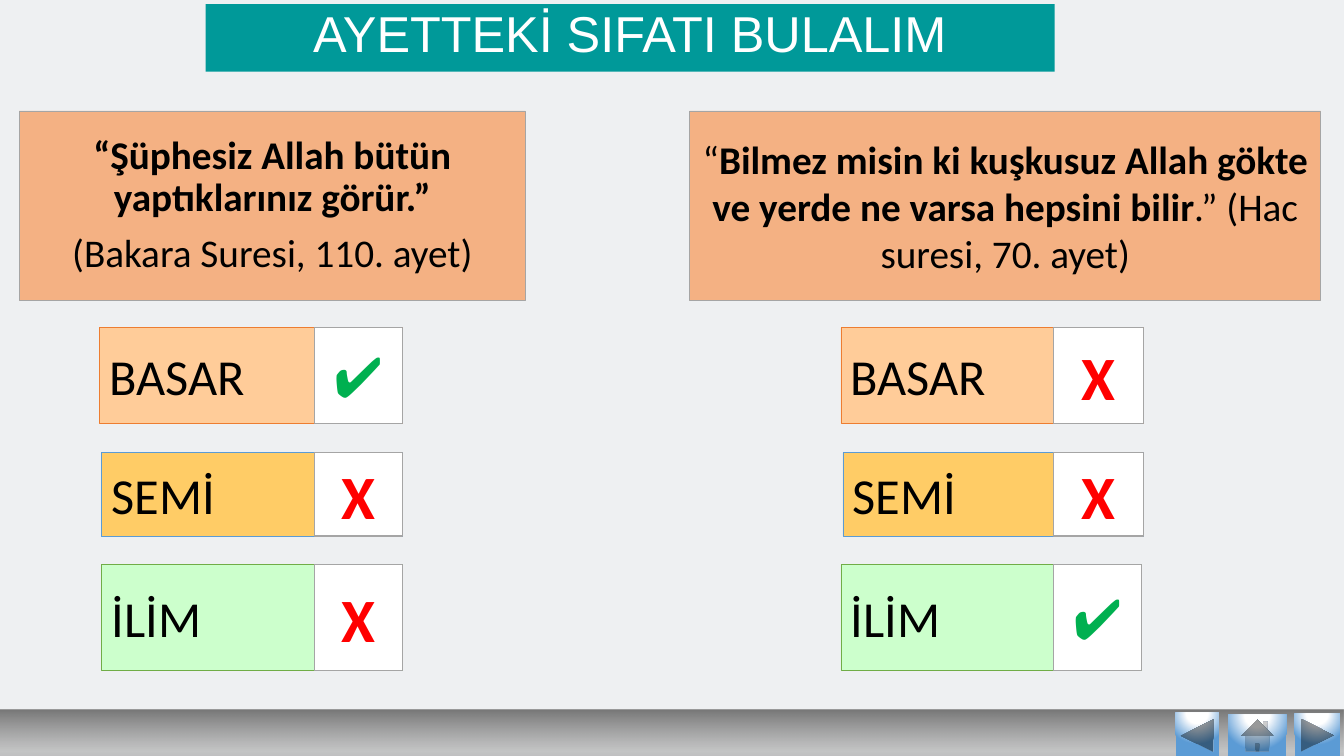
from lxml import etree
from pptx import Presentation
from pptx.dml.color import RGBColor
from pptx.enum.shapes import MSO_SHAPE
from pptx.enum.text import MSO_ANCHOR, PP_ALIGN
from pptx.oxml.ns import nsdecls, qn
from pptx.util import Inches, Pt

RECT = MSO_SHAPE.RECTANGLE
LEFT, CENTER = PP_ALIGN.LEFT, PP_ALIGN.CENTER
TOP, MIDDLE = MSO_ANCHOR.TOP, MSO_ANCHOR.MIDDLE

COLORS = {
    "page": "EEF0F2", "title": "009999", "verse": "F4B183", "gray": "A5A5A5",
    "white": "FFFFFF", "black": "000000", "green": "00B050", "red": "FF0000",
    "peach": "FFCC99", "orange": "ED7D31", "amber": "FFCC66", "blue": "5B9BD5",
    "mint": "CCFFCC", "leaf": "70AD47",
}

TITLE = "AYETTEKİ SIFATI BULALIM"

# Attribute, top, height, fill, line
ROWS = [
    ("BASAR", 3.25, 0.95, "peach", "orange"),
    ("SEMİ", 4.49, 0.83, "amber", "blue"),
    ("İLİM", 5.6, 1.05, "mint", "leaf"),
]

# Verse paragraphs are lists of (text, bold); answers are (left, right, mark)
QUESTIONS = [
    {
        "left": 0.19, "width": 5.02, "line_spacing": 0.9,
        "verse": [
            [("“Şüphesiz Allah bütün yaptıklarınız görür.”", True)],
            [("(Bakara Suresi, 110. ayet)", False)],
        ],
        "mark_left": 3.12,
        "answers": [(0.99, 3.99, "✔"), (1.01, 3.99, "X"), (1.01, 3.99, "X")],
    },
    {
        "left": 6.84, "width": 6.26, "line_spacing": 1.0,
        "verse": [
            [("“", False),
             ("Bilmez misin ki kuşkusuz Allah gökte ve yerde ne varsa hepsini bilir", True),
             (".” (Hac suresi, 70. ayet)", False)],
        ],
        "mark_left": 10.45,
        "answers": [(8.34, 11.34, "X"), (8.36, 11.34, "X"), (8.34, 11.32, "✔")],
    },
]

# Mark: size, color, bold
MARKS = {"✔": (40, "green", False), "X": (44, "red", True)}

# Gradient stops are (position %, color, opacity %)
BAR_STOPS = [(0, "C0C0C0", 100), (17, "B3B3B3", 70), (100, "777777", 100)]
BAR_SHADE = '<a:lin ang="16200000" scaled="0"/>'
BUTTON_STOPS = [(0, "FFFFFF", 100), (35, "FFFFFF", 100), (100, "5B9BD5", 100)]
BUTTON_SHADE = ('<a:path path="circle"><a:fillToRect l="50000" t="-80000" '
                'r="50000" b="180000"/></a:path>')
BUTTONS = [
    (MSO_SHAPE.ACTION_BUTTON_BACK_OR_PREVIOUS, (11.66, 7.07, 0.43, 0.46)),
    (MSO_SHAPE.ACTION_BUTTON_FORWARD_OR_NEXT, (12.84, 7.08, 0.45, 0.43)),
    (MSO_SHAPE.ACTION_BUTTON_HOME, (12.18, 7.09, 0.58, 0.42)),
]


def rgb(name):
    return RGBColor.from_string(COLORS[name])


def add_shape(slide, kind, box, fill=None, line=None, weight=0.5):
    s = slide.shapes.add_shape(kind, *map(Inches, box))
    s.shadow.inherit = False
    if fill:
        s.fill.solid()
        s.fill.fore_color.rgb = rgb(fill)
    else:
        s.fill.background()
    if line:
        s.line.color.rgb = rgb(line)
        s.line.width = Pt(weight)
    else:
        s.line.fill.background()
    return s


def add_gradient_shape(slide, kind, box, stops, shade):
    s = add_shape(slide, kind, box)
    gs = "".join(
        f'<a:gs pos="{pos * 1000}"><a:srgbClr val="{color}">'
        f'<a:alpha val="{opacity * 1000}"/></a:srgbClr></a:gs>'
        for pos, color, opacity in stops)
    gradient = etree.fromstring(
        f'<a:gradFill {nsdecls("a")} rotWithShape="1">'
        f'<a:gsLst>{gs}</a:gsLst>{shade}</a:gradFill>')
    props = s._element.spPr
    props.replace(props.find(qn("a:noFill")), gradient)


def write(s, paragraphs, size, color="black", font="Calibri", align=CENTER,
          anchor=MIDDLE, line_spacing=1.0, space_before=0):
    """Fill a shape with paragraphs, each a list of (text, bold) runs."""
    tf = s.text_frame
    tf.word_wrap = True
    tf.vertical_anchor = anchor
    for i, runs in enumerate(paragraphs):
        p = tf.add_paragraph() if i else tf.paragraphs[0]
        p.alignment = align
        p.line_spacing = line_spacing
        p.space_before = Pt(space_before)
        p.font.size = Pt(size)
        p.font.name = font
        p.font.color.rgb = rgb(color)
        for text, bold in runs:
            r = p.add_run()
            r.text = text
            r.font.bold = bold


def add_question(slide, question):
    verse = add_shape(slide, RECT, (question["left"], 1.1, question["width"], 1.88),
                      "verse", "gray")
    write(verse, question["verse"], 28, line_spacing=question["line_spacing"],
          space_before=10)
    mark_left = question["mark_left"]
    for row, (left, right, mark) in zip(ROWS, question["answers"]):
        name, top, height, fill, line = row
        label = add_shape(slide, RECT, (left, top, right - left, height), fill, line)
        write(label, [[(name, False)]], 36, align=LEFT)
        size, color, bold = MARKS[mark]
        cell = add_shape(slide, RECT, (mark_left, top, right - mark_left, height),
                         "white", "gray", 1)
        write(cell, [[(mark, bold)]], size, color)


def main():
    prs = Presentation()
    prs.slide_width, prs.slide_height = Inches(13.33), Inches(7.5)
    slide = prs.slides.add_slide(prs.slide_layouts[6])
    slide.background.fill.solid()
    slide.background.fill.fore_color.rgb = rgb("page")

    title = add_shape(slide, RECT, (2.04, 0.04, 8.42, 0.67), "title")
    write(title, [[(TITLE, False)]], 36, "white", "Arial", anchor=TOP, line_spacing=0.9)
    for question in QUESTIONS:
        add_question(slide, question)

    add_gradient_shape(slide, RECT, (0, 7.04, 13.33, 0.49), BAR_STOPS, BAR_SHADE)
    for kind, box in BUTTONS:
        add_gradient_shape(slide, kind, box, BUTTON_STOPS, BUTTON_SHADE)
    prs.save("out.pptx")


if __name__ == "__main__":
    main()
